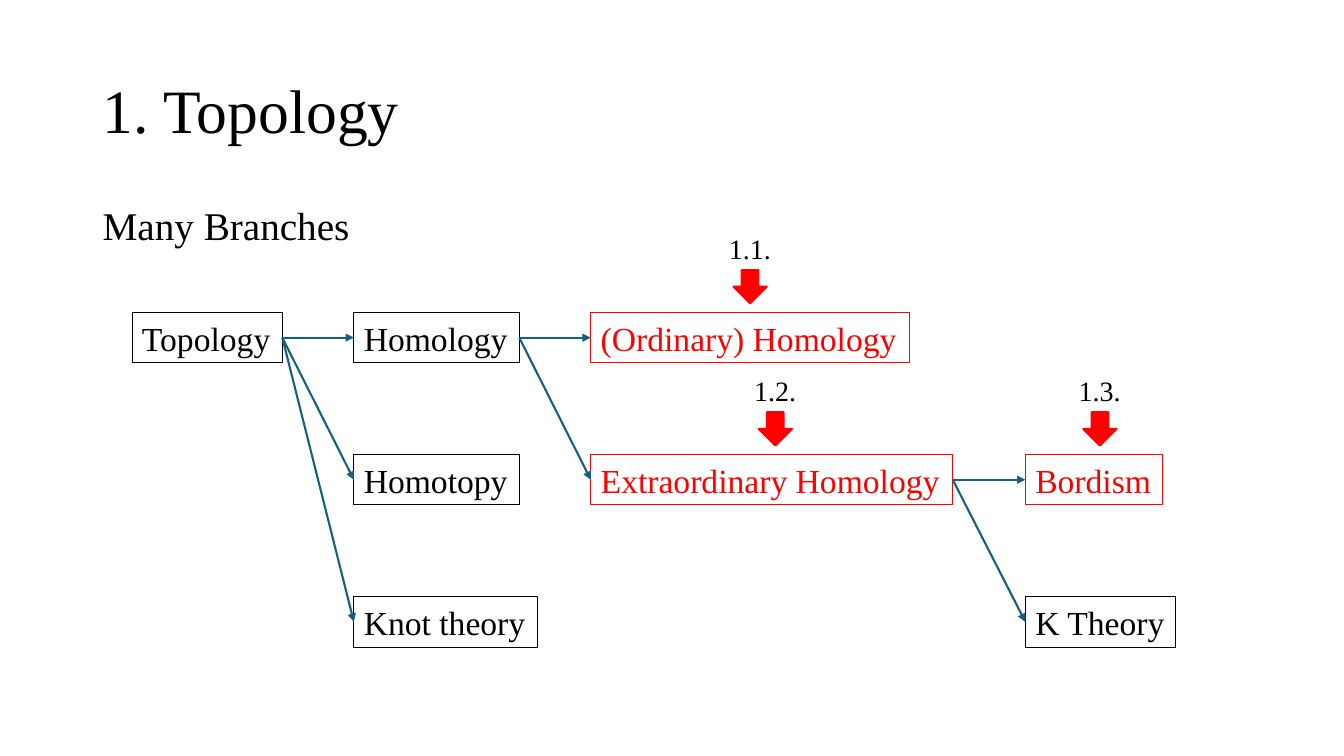
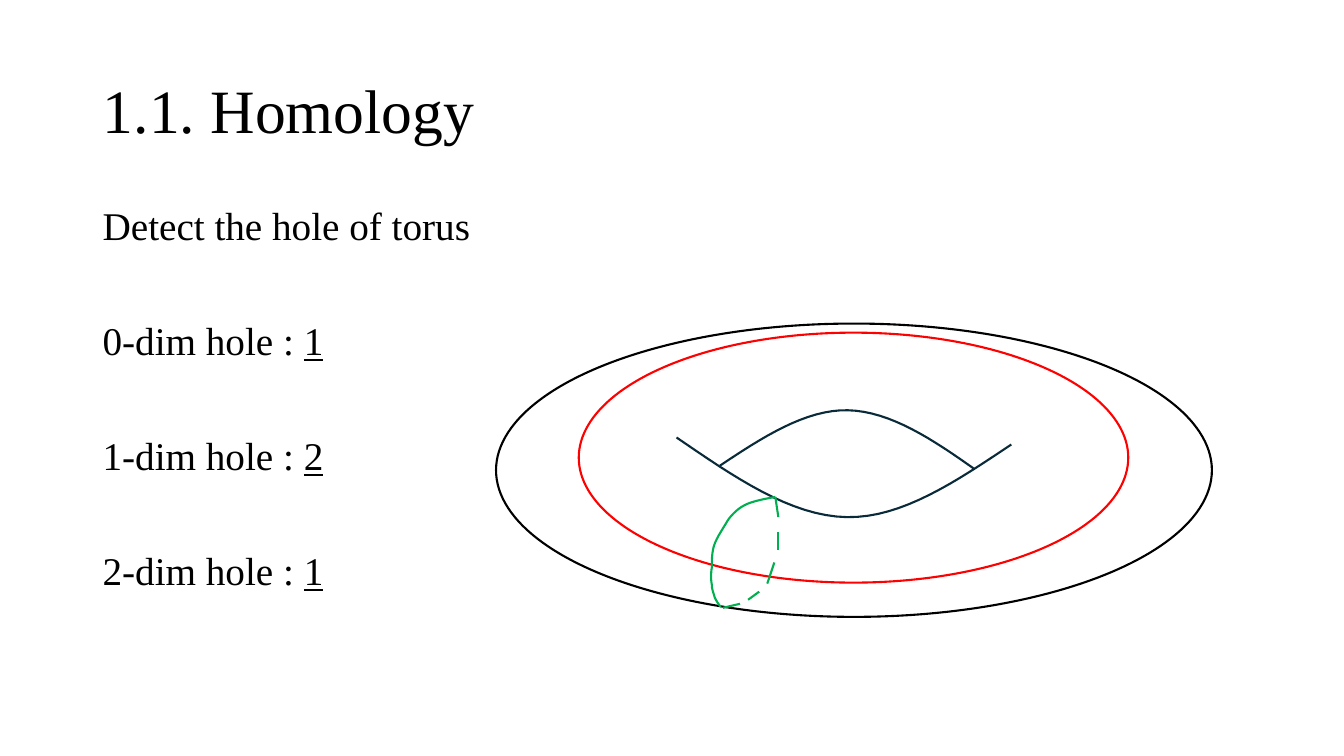
import pptx
import pptx.util
import pptx.dml.color
import pptx.enum.shapes
import pptx.enum.text
import pptx.oxml
import pptx.oxml.ns
from lxml import etree

Inches = pptx.util.Inches
Pt = pptx.util.Pt
SHAPE = pptx.enum.shapes.MSO_SHAPE
TEXT = pptx.enum.text
qn = pptx.oxml.ns.qn

COLORS = {"black": "000000", "red": "FF0000", "arrow": "156082",
          "hole": "092A39", "green": "00B050"}


def rgb(name):
    return pptx.dml.color.RGBColor.from_string(COLORS[name])


def bezier(start, *curves, steps=16):
    points = [start]
    for c1, c2, end in curves:
        p0 = points[-1]
        for i in range(1, steps + 1):
            t = i / steps
            u = 1 - t
            points.append(tuple(
                u**3 * a + 3 * u * u * t * b + 3 * u * t * t * c + t**3 * d
                for a, b, c, d in zip(p0, c1, c2, end)))
    return points


class Deck:
    font = "Times New Roman"

    def __init__(self):
        self.prs = pptx.Presentation()
        self.prs.slide_width, self.prs.slide_height = Inches(13.33), Inches(7.5)

    def slide(self, title):
        self.s = self.prs.slides.add_slide(self.prs.slide_layouts[5])
        sp = self.s.shapes.title
        sp.left, sp.top = Inches(0.92), Inches(0.4)
        sp.width, sp.height = Inches(11.5), Inches(1.45)
        tf = sp.text_frame
        tf.text = title
        tf.auto_size = TEXT.MSO_AUTO_SIZE.NONE
        tf.vertical_anchor = TEXT.MSO_ANCHOR.MIDDLE
        self.style(tf.paragraphs[0], 44)
        tf.paragraphs[0].line_spacing = 0.9

    def style(self, p, size, color="black"):
        p.alignment = TEXT.PP_ALIGN.LEFT
        p.font.name = self.font
        p.font.size = Pt(size)
        p.font.color.rgb = rgb(color)

    def outline(self, sp, color, width=1.5):
        sp.line.color.rgb = rgb(color)
        sp.line.width = Pt(width)

    def body(self, lines, gap=52):
        tf = self.s.shapes.add_textbox(
            Inches(0.92), Inches(2), Inches(11.5), Inches(4.76)).text_frame
        tf.word_wrap = True
        for i, (text, answer) in enumerate(lines):
            p = tf.add_paragraph() if i else tf.paragraphs[0]
            self.style(p, 28)
            p.line_spacing = 0.9
            p.space_before = Pt(gap if i else 10)
            p.add_run().text = text
            if answer:
                r = p.add_run()
                r.text = answer
                r.font.underline = True

    def label(self, text, x, y, w, h, size, color="black"):
        sp = self.s.shapes.add_textbox(Inches(x), Inches(y), Inches(w), Inches(h))
        tf = sp.text_frame
        tf.word_wrap = False
        tf.text = text
        self.style(tf.paragraphs[0], size, color)
        return sp

    def box(self, text, x, y, w, color):
        sp = self.label(text, x, y, w, 0.5, 24, color)
        self.outline(sp, color, 0.75)
        return sp

    def marker(self, text, center, box_top):
        self.label(text, center - 0.31, box_top - 0.85, 0.62, 0.44, 20)
        sp = self.shape(SHAPE.DOWN_ARROW, center - 0.165, box_top - 0.42,
                        0.33, 0.33, "red")
        sp.fill.solid()
        sp.fill.fore_color.rgb = rgb("red")

    def shape(self, kind, x, y, w, h, color):
        sp = self.s.shapes.add_shape(kind, Inches(x), Inches(y), Inches(w), Inches(h))
        sp.shadow.inherit = False
        sp.fill.background()
        self.outline(sp, color)
        return sp

    def line(self, start, end, color):
        sp = self.s.shapes.add_connector(
            pptx.enum.shapes.MSO_CONNECTOR.STRAIGHT,
            *(Inches(v) for v in (*start, *end)))
        self.outline(sp, color)
        etree.SubElement(sp._element.spPr, qn("a:effectLst"))
        return sp

    def arrow(self, parent, child):
        sp = self.line((0, 0), (1, 1), "arrow")
        sp.begin_connect(parent, 3)
        sp.end_connect(child, 1)
        etree.SubElement(sp.line._get_or_add_ln(), qn("a:tailEnd"), type="triangle")

    def curve(self, points, color):
        points = [(Inches(x), Inches(y)) for x, y in points]
        fb = self.s.shapes.build_freeform(*points[0])
        fb.add_line_segments(points[1:], close=False)
        sp = fb.convert_to_shape()
        sp.shadow.inherit = False
        sp.fill.background()
        self.outline(sp, color)


def topology(deck):
    deck.slide("1. Topology")
    deck.body([("Many Branches", "")])
    columns = [1.31, 3.51, 5.86, 10.17]
    rows = [3.1 + 1.41 * i for i in range(3)]
    branches = [
        ("Topology", 0, 0, 1.49, "black", None),
        ("Homology", 1, 0, 1.64, "black", "Topology"),
        ("Homotopy", 1, 1, 1.64, "black", "Topology"),
        ("Knot theory", 1, 2, 1.82, "black", "Topology"),
        ("(Ordinary) Homology", 2, 0, 3.16, "red", "Homology"),
        ("Extraordinary Homology", 2, 1, 3.59, "red", "Homology"),
        ("Bordism", 3, 1, 1.36, "red", "Extraordinary Homology"),
        ("K Theory", 3, 2, 1.49, "black", "Extraordinary Homology"),
    ]
    boxes = {}
    for text, col, row, width, color, parent in branches:
        boxes[text] = deck.box(text, columns[col], rows[row], width, color)
        if parent:
            deck.arrow(boxes[parent], boxes[text])
    for text, center, row in [("1.1.", 7.44, 0), ("1.2.", 7.69, 1), ("1.3.", 10.91, 1)]:
        deck.marker(text, center, rows[row])


def homology(deck):
    deck.slide("1.1. Homology")
    deck.body([("Detect the hole of torus", ""), ("0-dim hole : ", "1"),
               ("1-dim hole : ", "2"), ("2-dim hole : ", "1")])
    deck.shape(SHAPE.OVAL, 4.92, 3.21, 7.1, 2.91, "black")
    deck.curve(bezier((6.71, 4.34),
                      ((7.28, 4.73), (7.84, 5.12), (8.4, 5.13)),
                      ((8.95, 5.14), (9.49, 4.77), (10.03, 4.41))), "hole")
    deck.curve(bezier((7.14, 4.62),
                      ((7.56, 4.34), (7.99, 4.06), (8.41, 4.07)),
                      ((8.83, 4.08), (9.25, 4.36), (9.66, 4.65))), "hole")
    deck.shape(SHAPE.OVAL, 5.74, 3.3, 5.45, 2.48, "red")
    deck.curve(bezier((7.69, 4.93),
                      ((7.58, 4.95), (7.48, 4.97), (7.41, 5)),
                      ((7.34, 5.03), (7.3, 5.07), (7.27, 5.1)),
                      ((7.23, 5.14), (7.22, 5.16), (7.19, 5.21)),
                      ((7.16, 5.26), (7.1, 5.35), (7.08, 5.42)),
                      ((7.06, 5.49), (7.06, 5.56), (7.06, 5.63)),
                      ((7.05, 5.69), (7.05, 5.75), (7.06, 5.8)),
                      ((7.06, 5.85), (7.08, 5.89), (7.09, 5.93)),
                      ((7.11, 5.97), (7.13, 6), (7.15, 6.02)), steps=6), "green")
    for start, end in [((7.69, 4.93), (7.72, 5.13)), ((7.72, 5.28), (7.72, 5.46)),
                       ((7.68, 5.58), (7.61, 5.79)), ((7.53, 5.87), (7.42, 5.95)),
                       ((7.17, 6.03), (7.34, 5.99))]:
        deck.line(start, end, "green")


def main():
    deck = Deck()
    topology(deck)
    homology(deck)
    deck.prs.save("out.pptx")


if __name__ == "__main__":
    main()
